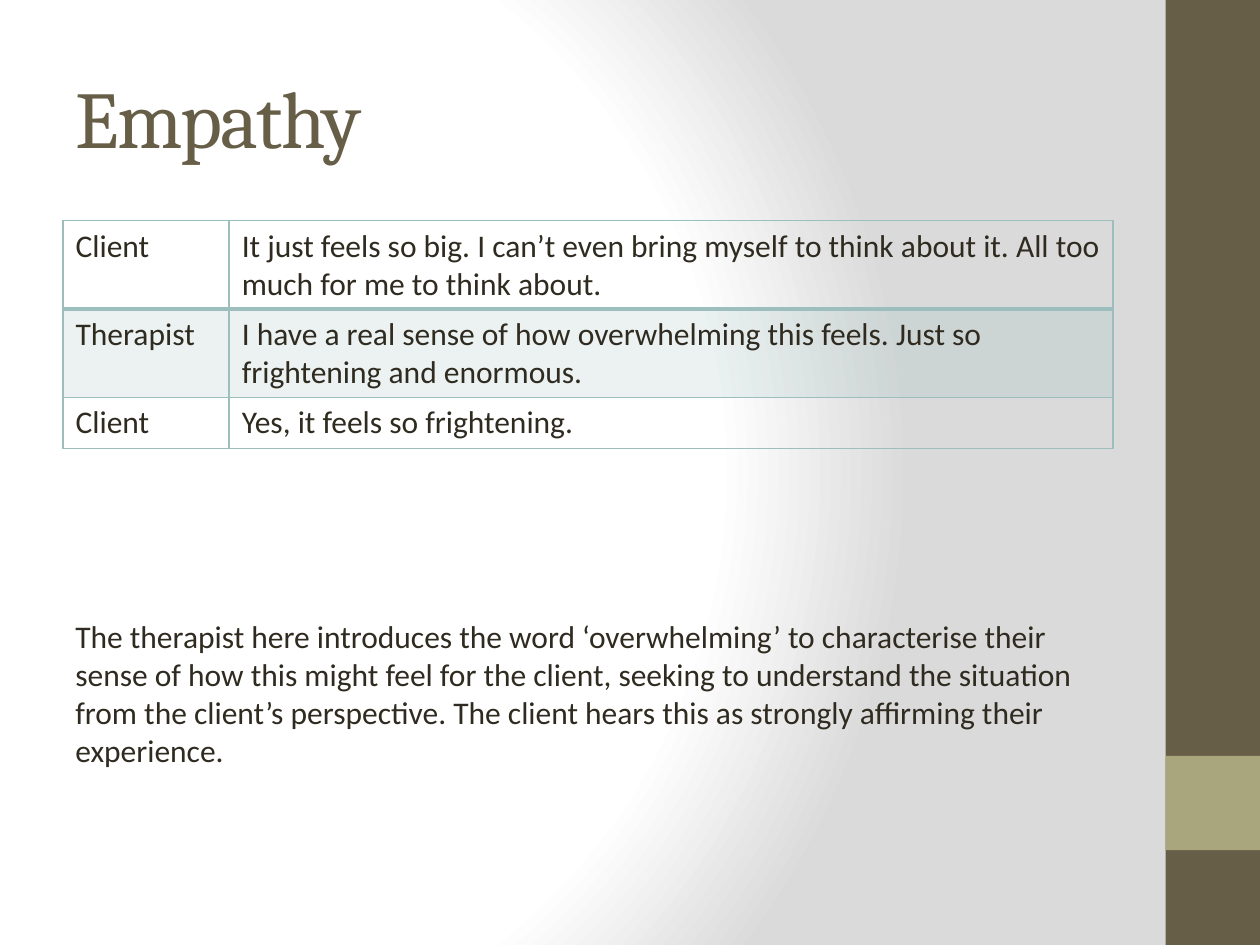
from collections import namedtuple
from dataclasses import dataclass

from lxml import etree
from pptx import Presentation
from pptx.dml.color import RGBColor
from pptx.enum import shapes, text
from pptx.oxml import ns
from pptx.util import Cm, Pt

Box = namedtuple("Box", "left top width height")


@dataclass(frozen=True)
class Theme:
    brown: str = "675E47"
    olive: str = "A9A57C"
    ink: str = "2F2B20"
    teal: str = "9CBEBD"
    white: str = "FFFFFF"
    grey: str = "DADADA"
    heading_font: str = "Cambria"
    body_font: str = "Calibri"
    heading_size: int = 46
    body_size: int = 18
    band_opacity: int = 20


THEME = Theme()
HEADING = {"name": THEME.heading_font, "size": Pt(THEME.heading_size), "color": THEME.brown}
BODY = {"name": THEME.body_font, "size": Pt(THEME.body_size), "color": THEME.ink}

DIALOGUE = [
    ("Client", "It just feels so big. I can’t even bring myself to think about it. "
               "All too much for me to think about."),
    ("Therapist", "I have a real sense of how overwhelming this feels. "
                  "Just so frightening and enormous."),
    ("Client", "Yes, it feels so frightening."),
]
COMMENTARY = (
    "The therapist here introduces the word ‘overwhelming’ to characterise their sense of how "
    "this might feel for the client, seeking to understand the situation from the client’s "
    "perspective. The client hears this as strongly affirming their experience."
)


def lengths(box):
    return [Cm(value) for value in box]


def add_node(parent, tag, **attributes):
    values = {key: str(value) for key, value in attributes.items()}
    return etree.SubElement(parent, ns.qn(tag), values)


def write_text(frame, words, style):
    span = frame.paragraphs[0].add_run()
    span.text = words
    for name, value in style.items():
        if name == "color":
            span.font.color.rgb = RGBColor.from_string(value)
        else:
            setattr(span.font, name, value)
    return span


def paint_background(page):
    fill = page.background.fill
    fill.solid()
    fill.fore_color.rgb = RGBColor.from_string(THEME.white)
    solid = page.element.find(".//" + ns.qn("a:solidFill"))
    gradient = etree.Element(ns.qn("a:gradFill"), rotWithShape="1")
    stops = add_node(gradient, "a:gsLst")
    for percent, color in ((0, THEME.white), (75, THEME.white), (100, THEME.grey)):
        stop = add_node(stops, "a:gs", pos=percent * 1000)
        add_node(stop, "a:srgbClr", val=color)
    focus = add_node(gradient, "a:path", path="circle")
    add_node(focus, "a:fillToRect", l=20000, t=50000, r=100000, b=50000)
    solid.getparent().replace(solid, gradient)


def add_sidebar(page, box):
    accent = Box(box.left, box.top + box.height * 0.8, box.width, box.width)
    for part, color in ((box, THEME.brown), (accent, THEME.olive)):
        panel = page.shapes.add_shape(shapes.MSO_SHAPE.RECTANGLE, *lengths(part))
        panel.shadow.inherit = False
        panel.fill.solid()
        panel.fill.fore_color.rgb = RGBColor.from_string(color)
        panel.line.fill.background()


def add_text(page, box, words, style, anchor):
    frame = page.shapes.add_textbox(*lengths(box)).text_frame
    frame.word_wrap = True
    frame.vertical_anchor = anchor
    return write_text(frame, words, style)


def add_title(page, box):
    span = add_text(page, box, "Empathy", HEADING, text.MSO_ANCHOR.MIDDLE)
    span.font._element.set("spc", "-100")


def add_borders(cell, widths):
    properties = cell._tc.get_or_add_tcPr()
    for side, width in widths.items():
        line = add_node(properties, "a:ln" + side, w=Pt(width))
        add_node(add_node(line, "a:solidFill"), "a:srgbClr", val=THEME.teal)


def fill_cell(cell, banded):
    if not banded:
        cell.fill.background()
        return
    cell.fill.solid()
    cell.fill.fore_color.rgb = RGBColor.from_string(THEME.teal)
    color = cell._tc.tcPr.find(ns.qn("a:solidFill") + "/" + ns.qn("a:srgbClr"))
    add_node(color, "a:alpha", val=THEME.band_opacity * 1000)


def add_dialogue(page, box):
    speaker_width = 3.35
    table = page.shapes.add_table(len(DIALOGUE), 2, *lengths(box)).table
    table.first_row = table.horz_banding = False
    for column, width in zip(table.columns, (speaker_width, box.width - speaker_width)):
        column.width = Cm(width)
    for index, (row, entries) in enumerate(zip(table.rows, DIALOGUE)):
        row.height = Cm(1.03)
        widths = {"L": 1, "R": 1, "T": 2 if index == 1 else 1, "B": 2 if index == 0 else 1}
        for cell, words in zip(row.cells, entries):
            write_text(cell.text_frame, words, BODY)
            add_borders(cell, widths)
            fill_cell(cell, index == 1)


def add_commentary(page, box):
    add_text(page, box, COMMENTARY, BODY, text.MSO_ANCHOR.TOP)


def main():
    deck = Presentation()
    deck.slide_width, deck.slide_height = Cm(25.4), Cm(19.05)
    page = deck.slides.add_slide(deck.slide_layouts[6])
    left, width = 1.27, 21.17
    paint_background(page)
    add_sidebar(page, Box(23.5, 0, 1.9, 19.05))
    add_title(page, Box(left, 0.76, width, 3.18))
    add_dialogue(page, Box(left, 4.45, width, 4.6))
    add_commentary(page, Box(left, 12.32, width, 4.11))
    deck.save("out.pptx")


if __name__ == "__main__":
    main()
